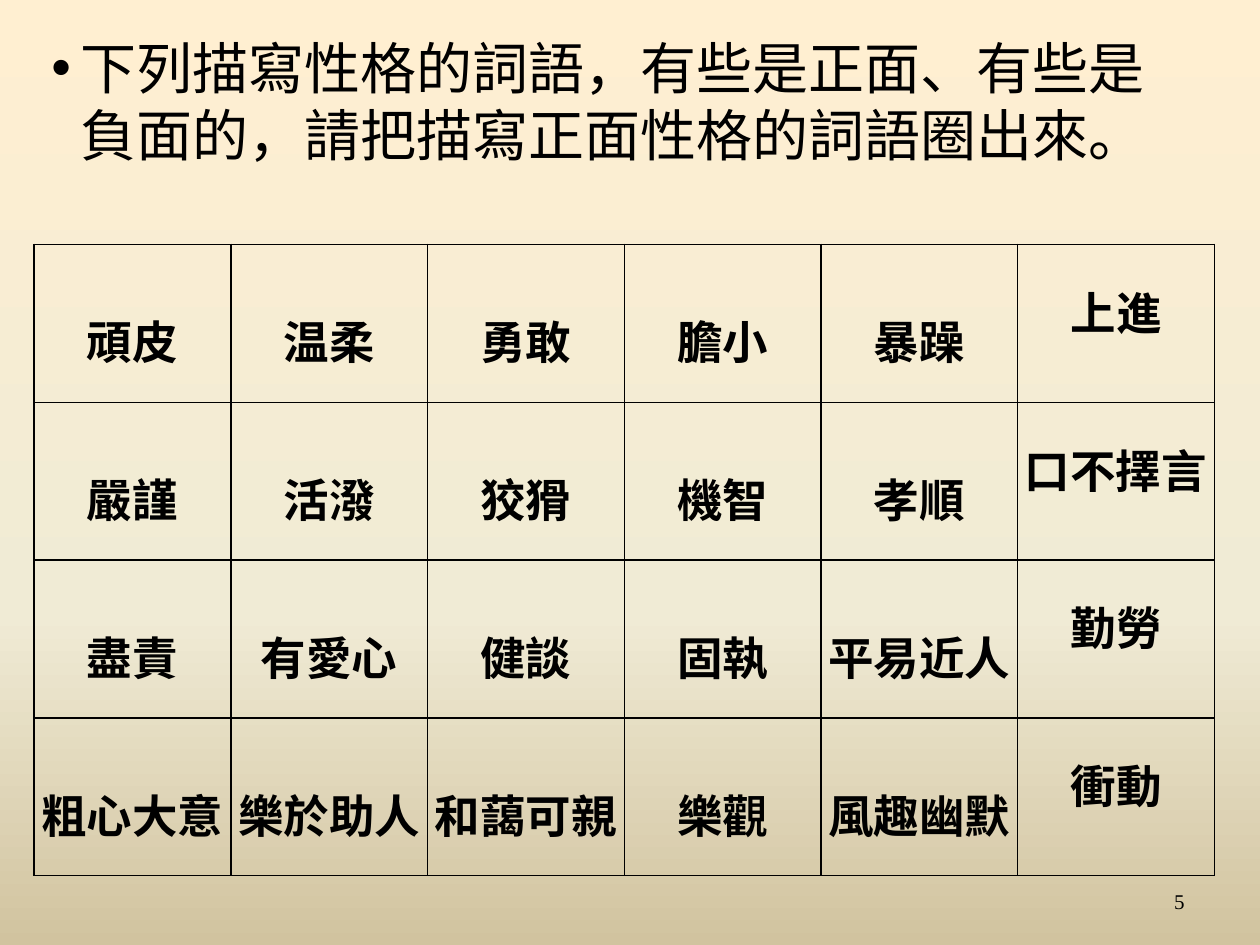
from lxml import etree
from pptx import Presentation
from pptx.dml.color import RGBColor
from pptx.enum import text
from pptx.oxml import parse_xml
from pptx.oxml.ns import qn, nsdecls
from pptx.util import Inches, Pt


def ink(code):
    return RGBColor.from_string(code)


def add_run(para, words, size, face, bold=False):
    run = para.add_run()
    run.text = words
    run.font.size = Pt(size)
    run.font.name = face
    run.font.bold = bold
    run.font.color.rgb = ink("000000")


prs = Presentation()
prs.slide_width = Inches(10)
prs.slide_height = Inches(7.5)
slide = prs.slides.add_slide(prs.slide_layouts[6])

fill = slide.background.fill
fill.gradient()
fill.gradient_angle = 270
stops = fill._fill._gradFill.find(qn("a:gsLst"))
for stop in list(stops):
    stops.remove(stop)
for pos, code in [(0, "FFEFD1"), (65, "F0EBD5"), (100, "D1C39F")]:
    stop = etree.SubElement(stops, qn("a:gs"), pos=str(pos * 1000))
    etree.SubElement(stop, qn("a:srgbClr"), val=code)

rows = [
    "頑皮 温柔 勇敢 膽小 暴躁 上進",
    "嚴謹 活潑 狡猾 機智 孝順 口不擇言",
    "盡責 有愛心 健談 固執 平易近人 勤勞",
    "粗心大意 樂於助人 和藹可親 樂觀 風趣幽默 衝動",
]
table = slide.shapes.add_table(
    4, 6, Inches(0.27), Inches(1.94), Inches(9.37), Inches(5.01)
).table
table.first_row = False
table.horz_banding = False
for r, row in enumerate(rows):
    for c, word in enumerate(row.split()):
        cell = table.cell(r, c)
        cell.fill.background()
        cell.margin_left = cell.margin_right = Inches(0.04)
        cell.margin_top = cell.margin_bottom = 0
        anchor = text.MSO_ANCHOR
        cell.vertical_anchor = anchor.TOP if c == 5 else anchor.MIDDLE
        para = cell.text_frame.paragraphs[0]
        para.alignment = text.PP_ALIGN.CENTER
        para.line_spacing = 1.5
        add_run(para, word, 26, "Times New Roman", True)
        props = cell._tc.get_or_add_tcPr()
        for i, side in enumerate("LRTB"):
            props.insert(i, parse_xml(
                f'<a:ln{side} {nsdecls("a")} w="12700"><a:solidFill>'
                f'<a:srgbClr val="000000"/></a:solidFill></a:ln{side}>'
            ))

box = slide.shapes.add_textbox(Inches(0.31), Inches(-0.1), Inches(9.02), Inches(1.8))
frame = box.text_frame
frame.word_wrap = True
frame.vertical_anchor = text.MSO_ANCHOR.MIDDLE
para = frame.paragraphs[0]
para.space_before = Pt(6.4)
props = para._p.get_or_add_pPr()
props.set("marL", str(Inches(0.23)))
props.set("indent", str(-Inches(0.23)))
etree.SubElement(props, qn("a:buFont"), typeface="Arial")
etree.SubElement(props, qn("a:buChar"), char="•")
add_run(para, "下列描寫性格的詞語，有些是正面、有些是負面的，請把描寫正面性格的詞語圈出來。", 32, "Calibri")

box = slide.shapes.add_textbox(Inches(7.17), Inches(6.95), Inches(2.33), Inches(0.4))
frame = box.text_frame
frame.word_wrap = True
frame.vertical_anchor = text.MSO_ANCHOR.MIDDLE
para = frame.paragraphs[0]
para.alignment = text.PP_ALIGN.RIGHT
add_run(para, "5", 12, "Times New Roman")

prs.save("out.pptx")
